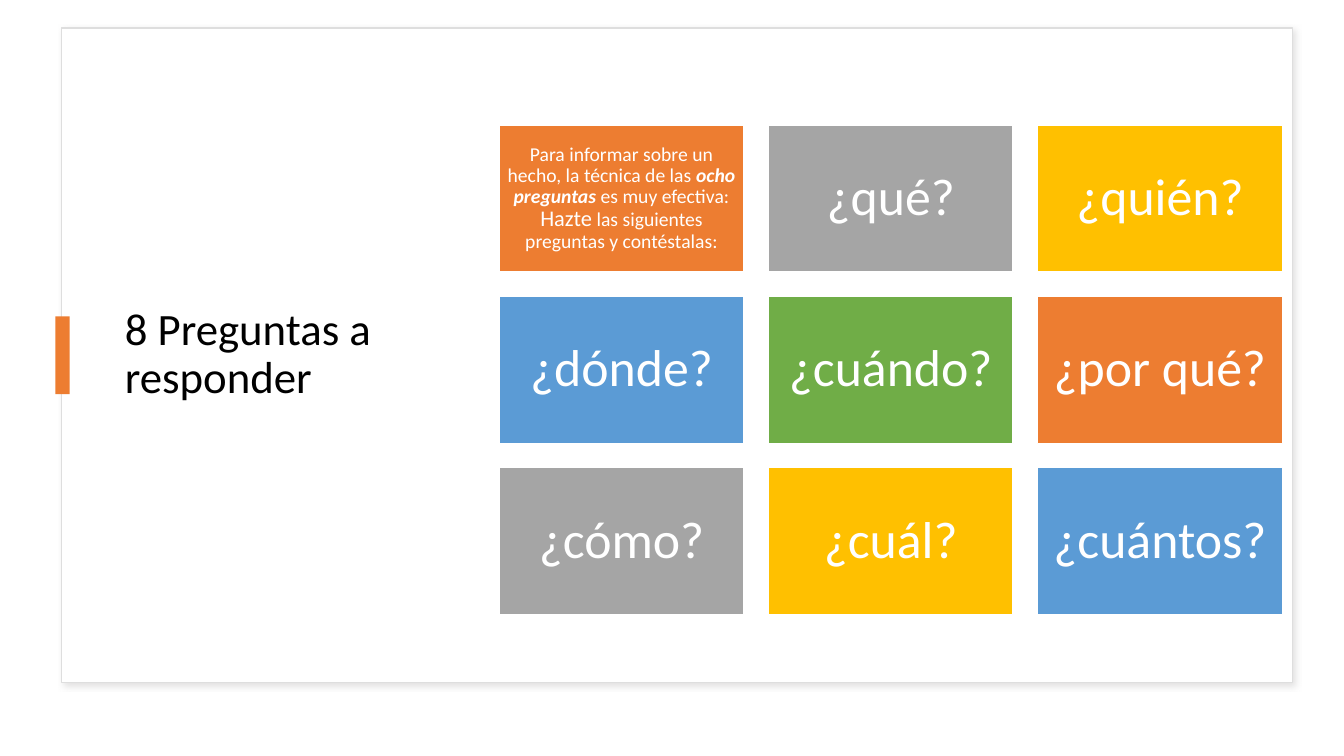
from dataclasses import dataclass

from lxml import etree
from pptx import Presentation
from pptx.dml.color import RGBColor
from pptx.enum.shapes import MSO_SHAPE as SHAPE
from pptx.enum.text import MSO_ANCHOR as ANCHOR, PP_ALIGN as ALIGN
from pptx.oxml.ns import qn
from pptx.util import Inches, Pt

WIDTH, HEIGHT = Inches(13.33), Inches(7.5)
FONT = "Calibri"
WHITE, BLACK, ORANGE, GRAY = "FFFFFF", "000000", "ED7D31", "A5A5A5"
GOLD, BLUE, GREEN = "FFC000", "5B9BD5", "70AD47"


@dataclass(frozen=True)
class Box:
    x: float
    y: float
    w: float
    h: float

    def emu(self):
        return (int(WIDTH * self.x / 100), int(HEIGHT * self.y / 100),
                int(WIDTH * self.w / 100), int(HEIGHT * self.h / 100))


@dataclass(frozen=True)
class Run:
    text: str
    size: float
    strong: bool = False


@dataclass(frozen=True)
class Tile:
    fill: str
    runs: tuple[Run, ...]
    inset: float = 0.15


def question(fill: str, text: str) -> Tile:
    return Tile(fill, (Run(text, 37),))


FRAME = Box(4.58, 3.73, 91.6, 86.53)
TITLE = Box(8.55, 7.33, 24.53, 79.33)
ACCENT = Box(4.13, 41.87, 1.05, 10.27)
FIRST_TILE = Box(37.13, 16.53, 18.23, 19.47)
COLUMNS, COLUMN_STEP, ROW_STEP = 3, 20.03, 22.67

INTRO = (
    Run("Para informar sobre un hecho, la técnica de las ", 14),
    Run("ocho preguntas", 14, True),
    Run(" es muy efectiva: ", 14),
    Run("Hazte", 16),
    Run(" las siguientes preguntas y contéstalas:", 14),
)
TILES = (
    Tile(ORANGE, INTRO, 0.06),
    question(GRAY, "¿qué?"),
    question(GOLD, "¿quién?"),
    question(BLUE, "¿dónde?"),
    question(GREEN, "¿cuándo?"),
    question(ORANGE, "¿por qué?"),
    question(GRAY, "¿cómo?"),
    question(GOLD, "¿cuál?"),
    question(BLUE, "¿cuántos?"),
)


def paint(color_format, value: str) -> None:
    color_format.rgb = RGBColor.from_string(value)


def add_rect(shapes, box: Box, fill: str, line: str | None = None):
    sp = shapes.add_shape(SHAPE.RECTANGLE, *box.emu())
    sp.shadow.inherit = False
    sp.fill.solid()
    paint(sp.fill.fore_color, fill)
    if line:
        paint(sp.line.color, line)
        sp.line.width = Pt(1)
    else:
        sp.line.fill.background()
    return sp


def write(sp, runs: tuple[Run, ...], color: str, align) -> None:
    tf = sp.text_frame
    tf.word_wrap = True
    tf.vertical_anchor = ANCHOR.MIDDLE
    p = tf.paragraphs[0]
    p.alignment = align
    p.line_spacing = 0.9
    for run in runs:
        r = p.add_run()
        r.text = run.text
        r.font.name = FONT
        r.font.size = Pt(run.size)
        r.font.bold = r.font.italic = run.strong
        paint(r.font.color, color)


def add_shadow(sp, color: str) -> None:
    effects = sp.element.spPr.find(qn("a:effectLst"))
    shadow = etree.SubElement(effects, qn("a:outerShdw"), blurRad=str(Pt(4)),
                              dist=str(Pt(3)), dir=str(45 * 60000),
                              algn="tl", rotWithShape="0")
    tint = etree.SubElement(shadow, qn("a:srgbClr"), val=color)
    etree.SubElement(tint, qn("a:alpha"), val="50000")


def add_tile(shapes, index: int, tile: Tile) -> None:
    row, col = divmod(index, COLUMNS)
    box = Box(FIRST_TILE.x + col * COLUMN_STEP, FIRST_TILE.y + row * ROW_STEP,
              FIRST_TILE.w, FIRST_TILE.h)
    sp = add_rect(shapes, box, tile.fill, WHITE)
    tf = sp.text_frame
    tf.margin_left = tf.margin_right = Inches(tile.inset)
    tf.margin_top = tf.margin_bottom = Inches(tile.inset)
    write(sp, tile.runs, WHITE, ALIGN.CENTER)


def main() -> None:
    """Build the slide of eight questions and save it."""
    prs = Presentation()
    prs.slide_width, prs.slide_height = WIDTH, HEIGHT
    shapes = prs.slides.add_slide(prs.slide_layouts[6]).shapes

    add_shadow(add_rect(shapes, FRAME, WHITE, "DEDEDE"), "C5C3C3")
    title = shapes.add_textbox(*TITLE.emu())
    write(title, (Run("8 Preguntas a responder", 32),), BLACK, ALIGN.LEFT)
    add_rect(shapes, ACCENT, ORANGE)

    group = shapes.add_group_shape()
    for index, tile in enumerate(TILES):
        add_tile(group.shapes, index, tile)

    prs.save("out.pptx")


if __name__ == "__main__":
    main()
